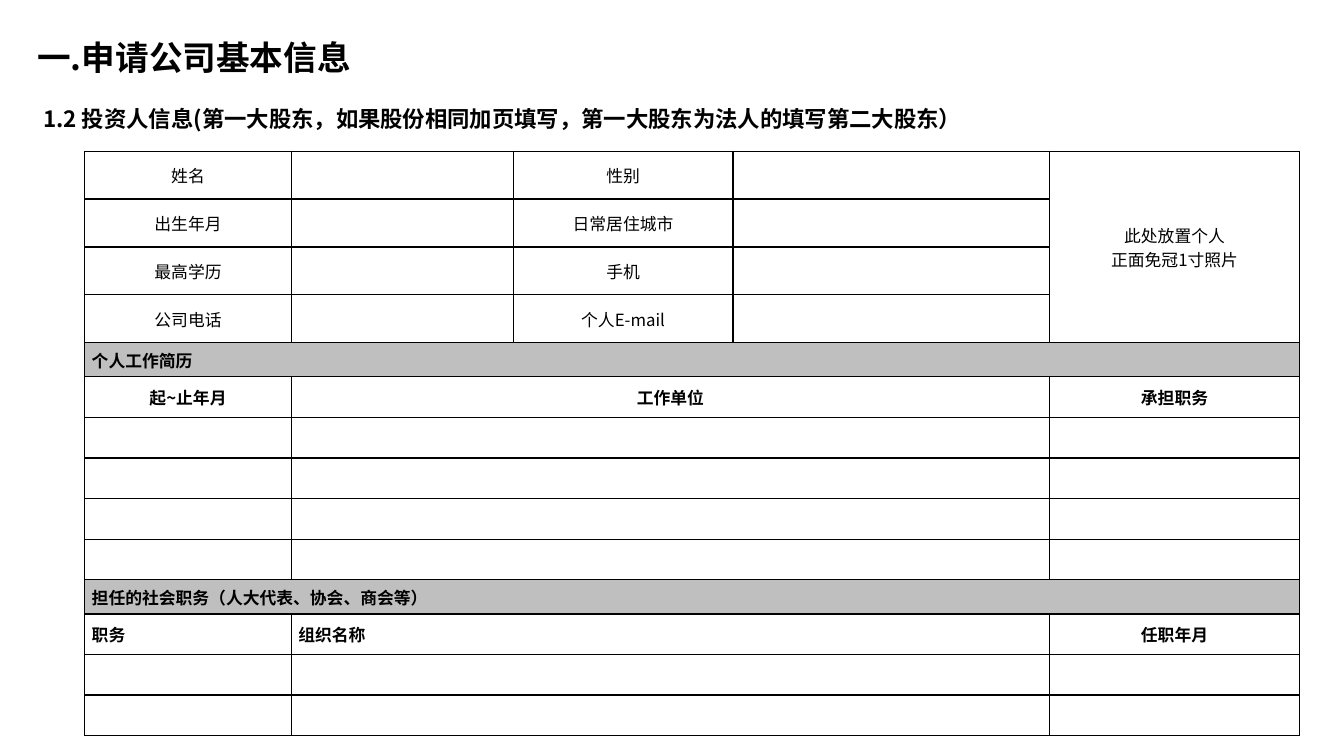
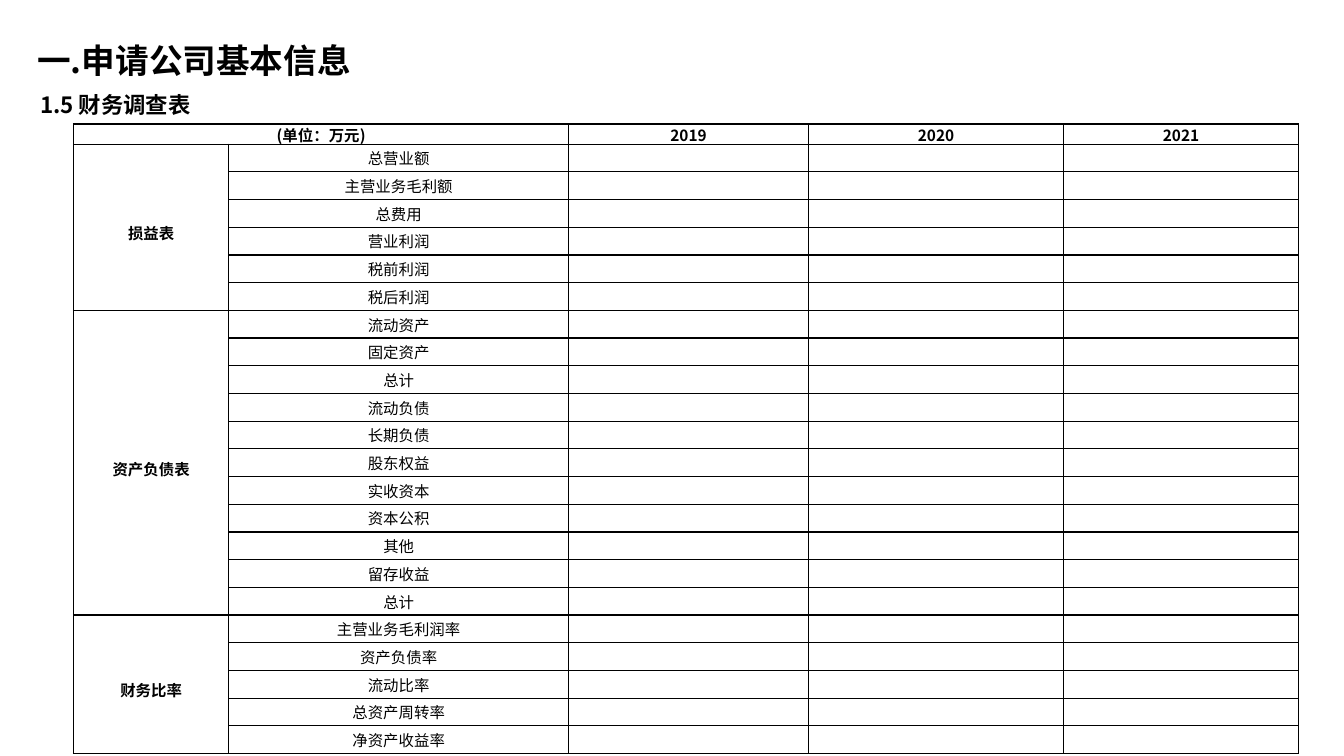
from lxml import etree
from pptx import Presentation
from pptx.dml.color import RGBColor
from pptx.enum.text import MSO_ANCHOR, PP_ALIGN
from pptx.oxml.ns import qn
from pptx.util import Inches, Pt

MIDDLE = MSO_ANCHOR.MIDDLE
LEFT, CENTER = PP_ALIGN.LEFT, PP_ALIGN.CENTER

COLORS = {"ink": "000000", "paper": "FFFFFF", "band": "BFBFBF"}
CJK_FONT = "Noto Sans CJK SC"
SECTION_TITLE = "一.申请公司基本信息"

PERSONAL_ROWS = [
    ("姓名", "性别"),
    ("出生年月", "日常居住城市"),
    ("最高学历", "手机"),
    ("公司电话", "个人E-mail"),
]
PHOTO_NOTE = "此处放置个人\n正面免冠1寸照片"
HISTORY_SECTIONS = [
    ("个人工作简历", ("起~止年月", "工作单位", "承担职务"), (CENTER, CENTER, CENTER), 4),
    ("担任的社会职务（人大代表、协会、商会等）", ("职务", "组织名称", "任职年月"),
     (LEFT, LEFT, CENTER), 2),
]

YEARS = ["2019", "2020", "2021"]
STATEMENTS = {
    "损益表": ["总营业额", "主营业务毛利额", "总费用", "营业利润", "税前利润", "税后利润"],
    "资产负债表": ["流动资产", "固定资产", "总计", "流动负债", "长期负债", "股东权益",
              "实收资本", "资本公积", "其他", "留存收益", "总计"],
    "财务比率": ["主营业务毛利润率", "资产负债率", "流动比率", "总资产周转率", "净资产收益率"],
}


def style_paragraph(paragraph, size, bold=False, latin=CJK_FONT):
    font = paragraph.font
    font.size = Pt(size)
    font.bold = bold
    font.color.rgb = RGBColor.from_string(COLORS["ink"])
    font.name = latin
    etree.SubElement(font._element, qn("a:ea"), typeface=CJK_FONT)


def add_heading(slide, text, left, top, width, height, size):
    frame = slide.shapes.add_textbox(
        Inches(left), Inches(top), Inches(width), Inches(height)).text_frame
    frame.word_wrap = True
    frame.text = text
    style_paragraph(frame.paragraphs[0], size, bold=True)
    return frame


def add_title(slide, top, height):
    frame = add_heading(slide, SECTION_TITLE, 0.37, top, 10.57, height, 24)
    frame.margin_left = frame.margin_right = frame.margin_top = frame.margin_bottom = 0
    frame.vertical_anchor = MIDDLE
    frame.paragraphs[0].line_spacing = 0.9


def add_subtitle(slide, text, left, top, width):
    frame = add_heading(slide, text, left, top, width, 0.37, 16)
    frame.paragraphs[0]._p.get_or_add_pPr().set("marL", str(Inches(0.12)))


def add_borders(cell):
    properties = cell._tc.get_or_add_tcPr()
    for side in ("lnL", "lnR", "lnT", "lnB"):
        line = etree.SubElement(properties, qn(f"a:{side}"), w=str(Pt(1)))
        fill = etree.SubElement(line, qn("a:solidFill"))
        etree.SubElement(fill, qn("a:srgbClr"), val=COLORS["ink"])


def fill_cell(cell, color):
    cell.fill.solid()
    cell.fill.fore_color.rgb = RGBColor.from_string(COLORS[color])


def add_form(slide, left, top, widths, heights, size, side_margin):
    form = slide.shapes.add_table(
        len(heights), len(widths), Inches(left), Inches(top),
        Inches(sum(widths)), Inches(sum(heights))).table
    form.first_row = form.horz_banding = False
    for column, width in zip(form.columns, widths):
        column.width = Inches(width)
    for row, height in zip(form.rows, heights):
        row.height = Inches(height)
    for cell in form.iter_cells():
        cell.margin_left = cell.margin_right = Inches(side_margin)
        cell.margin_top = cell.margin_bottom = 0
        cell.vertical_anchor = MIDDLE
        add_borders(cell)
        fill_cell(cell, "paper")
        etree.SubElement(cell.text_frame.paragraphs[0]._p, qn("a:endParaRPr"),
                         sz=str(size * 100))
    return form


def write_cell(cell, text, size, bold=False, align=CENTER, latin=CJK_FONT, spacing=None):
    cell.text = text
    for paragraph in cell.text_frame.paragraphs:
        paragraph.alignment = align
        paragraph.line_spacing = spacing
        style_paragraph(paragraph, size, bold, latin)


def build_investor_slide(slide):
    add_title(slide, 0.31, 0.57)
    add_subtitle(
        slide, "1.2 投资人信息(第一大股东，如果股份相同加页填写，第一大股东为法人的填写第二大股东）",
        0.21, 0.99, 11.81)

    size, band_height, personal_height = 12, 0.34, 1.9 / 4
    entry_height = (5.8 - 4 * personal_height - 2 * band_height) / 8
    heights = [personal_height] * len(PERSONAL_ROWS)
    for *_, blank_rows in HISTORY_SECTIONS:
        heights += [band_height] + [entry_height] * (blank_rows + 1)
    form = add_form(slide, 0.84, 1.5, [2.05, 2.2, 2.18, 3.14, 2.48], heights, size, 0.07)

    for row, labels in enumerate(PERSONAL_ROWS):
        for column, label in zip((0, 2), labels):
            write_cell(form.cell(row, column), label, size)
    form.cell(0, 4).merge(form.cell(len(PERSONAL_ROWS) - 1, 4))
    write_cell(form.cell(0, 4), PHOTO_NOTE, size)

    row = len(PERSONAL_ROWS)
    for band, headers, alignments, blank_rows in HISTORY_SECTIONS:
        form.cell(row, 0).merge(form.cell(row, 4))
        fill_cell(form.cell(row, 0), "band")
        write_cell(form.cell(row, 0), band, size, bold=True, align=LEFT)
        for column, header, align in zip((0, 1, 4), headers, alignments):
            latin = "Arial" if header == "组织名称" else CJK_FONT
            write_cell(form.cell(row + 1, column), header, size, True, align, latin)
        for entry in range(row + 1, row + 2 + blank_rows):
            form.cell(entry, 1).merge(form.cell(entry, 3))
        row += 2 + blank_rows


def build_finance_slide(slide):
    size, latin = 11, "Calibri"
    item_count = sum(map(len, STATEMENTS.values()))
    heights = [0.2] + [(6.25 - 0.2) / item_count] * item_count
    form = add_form(slide, 0.73, 1.23, [1.54, 3.37, 2.38, 2.53, 2.33], heights, size, 0.06)

    form.cell(0, 0).merge(form.cell(0, 1))
    write_cell(form.cell(0, 0), "(单位：万元)", size, bold=True)
    for column, year in enumerate(YEARS, start=2):
        write_cell(form.cell(0, column), year, size, bold=True)

    row = 1
    for statement, items in STATEMENTS.items():
        form.cell(row, 0).merge(form.cell(row + len(items) - 1, 0))
        write_cell(form.cell(row, 0), statement, size, bold=True, latin=latin, spacing=1.5)
        for offset, item in enumerate(items):
            write_cell(form.cell(row + offset, 1), item, size, latin=latin)
        row += len(items)

    add_title(slide, 0.36, 0.52)
    add_subtitle(slide, "1.5 财务调查表", 0.18, 0.86, 1.92)


def main():
    deck = Presentation()
    deck.slide_width, deck.slide_height = Inches(13.33), Inches(7.5)
    blank = deck.slide_layouts[6]
    for build in (build_investor_slide, build_finance_slide):
        build(deck.slides.add_slide(blank))
    deck.save("out.pptx")


if __name__ == "__main__":
    main()
